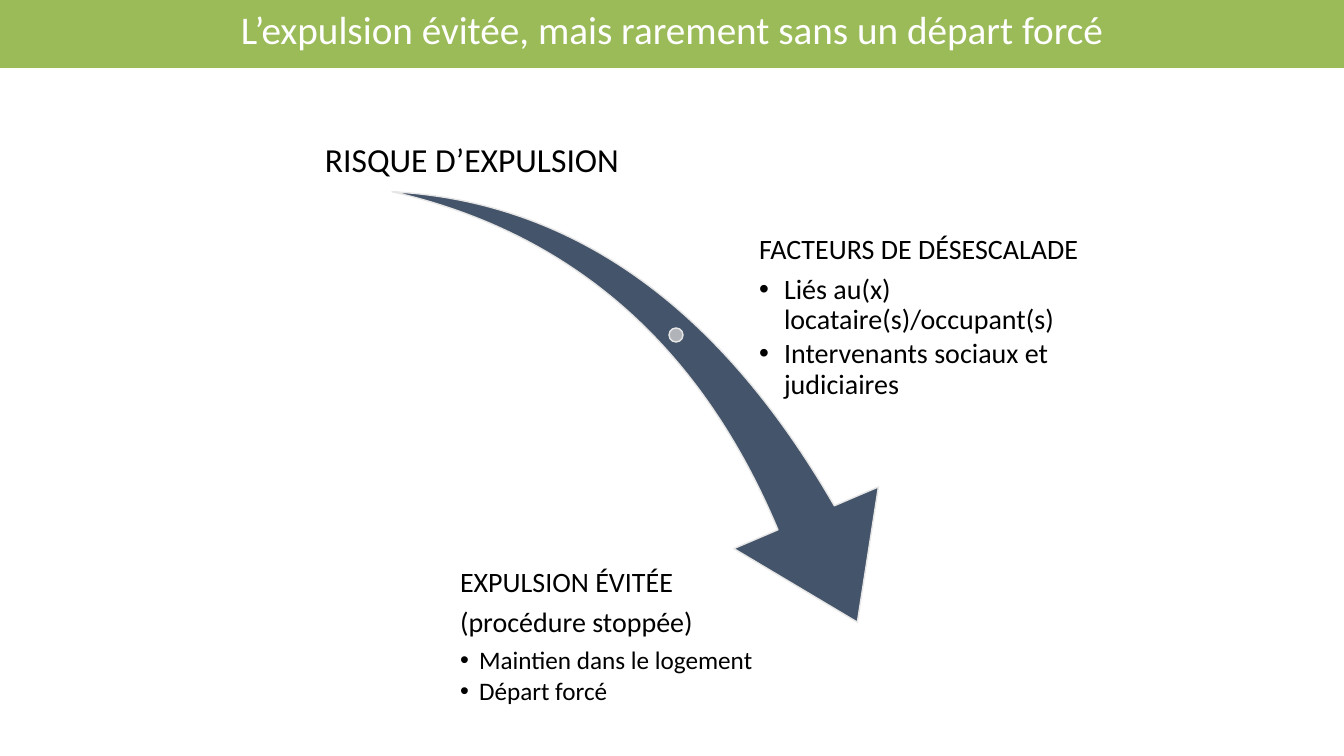
"""Build the slide on evictions that are avoided."""
from lxml.etree import SubElement
from pptx import Presentation
from pptx.dml.color import RGBColor
from pptx.enum.shapes import MSO_SHAPE as SHAPE
from pptx.enum.text import MSO_ANCHOR as ANCHOR, MSO_AUTO_SIZE as AUTO, PP_ALIGN as ALIGN
from pptx.oxml.ns import qn
from pptx.util import Emu, Pt

GREEN = RGBColor(0x9B, 0xBB, 0x59)
WHITE = RGBColor(0xFF, 0xFF, 0xFF)
BLACK = RGBColor(0x00, 0x00, 0x00)
SLATE = RGBColor(0x44, 0x54, 0x6A)
SILVER = RGBColor(0xB0, 0xB4, 0xB9)
PALE = RGBColor(0xE7, 0xE6, 0xE6)

FONT = "Calibri"
SCALE = 914400 / 100.8
SLIDE = (1344, 756)
INSET = 3

TITLE = ("L’expulsion évitée, mais rarement sans un départ forcé", 28, 0)
TITLE_BOX = (0, 0, 1344, 64)
RISK = ("RISQUE D’EXPULSION", 24, 0)
RISK_BOX = (293, 82, 358, 101)
LISTS = [
    ((756, 232, 403, 224), [
        ("FACTEURS DE DÉSESCALADE", 20, 0),
        ("Liés au(x) locataire(s)/occupant(s)", 20, 25),
        ("Intervenants sociaux et judiciaires", 20, 25),
    ]),
    ((457, 565, 533, 146), [
        ("EXPULSION ÉVITÉE", 20, 0),
        ("(procédure stoppée)", 20, 0),
        ("Maintien dans le logement", 18, 19),
        ("Départ forcé", 18, 19),
    ]),
]
ARROW_BOX = (380, 208, 546, 381)
ARROW_TURN = 73.3
ARROW_ADJ = (0.16, 0.31)
DOT_BOX = (669, 328, 14, 14)


def px(n):
    return Emu(round(n * SCALE))


def place(sp, box):
    sp.left, sp.top, sp.width, sp.height = map(px, box)


def write(sp, lines, color=BLACK, align=ALIGN.LEFT, anchor=ANCHOR.TOP):
    tf = sp.text_frame
    tf.word_wrap = True
    tf.auto_size = AUTO.NONE
    tf.vertical_anchor = anchor
    tf.margin_left = tf.margin_top = tf.margin_right = tf.margin_bottom = px(INSET)
    for i, (text, size, indent) in enumerate(lines):
        p = tf.add_paragraph() if i else tf.paragraphs[0]
        p.alignment = align
        p.line_spacing = 0.9
        p.space_before = Pt(0)
        p.space_after = Pt(size * (0.15 if indent else 0.35))
        pPr = p._p.get_or_add_pPr()
        pPr.set("marL", str(px(indent)))
        pPr.set("indent", str(px(-indent)))
        if indent:
            SubElement(pPr, qn("a:buFont"), typeface="Arial")
            SubElement(pPr, qn("a:buChar"), char="•")
        else:
            SubElement(pPr, qn("a:buNone"))
        r = p.add_run()
        r.text = text
        r.font.name, r.font.size = FONT, Pt(size)
        r.font.color.rgb = color


def draw(s, kind, box, color):
    sp = s.shapes.add_shape(kind, *map(px, box))
    sp.shadow.inherit = False
    sp.fill.solid()
    sp.fill.fore_color.rgb = color
    sp.line.color.rgb = PALE
    sp.line.width = Pt(1)
    return sp


def main():
    prs = Presentation()
    prs.slide_width, prs.slide_height = map(px, SLIDE)
    s = prs.slides.add_slide(prs.slide_layouts.get_by_name("Two Content"))

    fill = s.background.fill
    fill.gradient()
    fill.gradient_angle = 270
    for stop, color in zip(fill.gradient_stops, (GREEN, WHITE)):
        stop.position = 0.09
        stop.color.rgb = color

    title, *bodies = s.placeholders
    place(title, TITLE_BOX)
    write(title, [TITLE], WHITE, ALIGN.CENTER, ANCHOR.MIDDLE)
    for body, (box, lines) in zip(bodies, LISTS):
        place(body, box)
        write(body, lines)

    arrow = draw(s, SHAPE.SWOOSH_ARROW, ARROW_BOX, SLATE)
    arrow.rotation = ARROW_TURN
    for i, value in enumerate(ARROW_ADJ):
        arrow.adjustments[i] = value
    draw(s, SHAPE.OVAL, DOT_BOX, SILVER)

    risk = s.shapes.add_textbox(*map(px, RISK_BOX))
    write(risk, [RISK], align=ALIGN.CENTER, anchor=ANCHOR.BOTTOM)
    prs.save("out.pptx")


if __name__ == "__main__":
    main()
